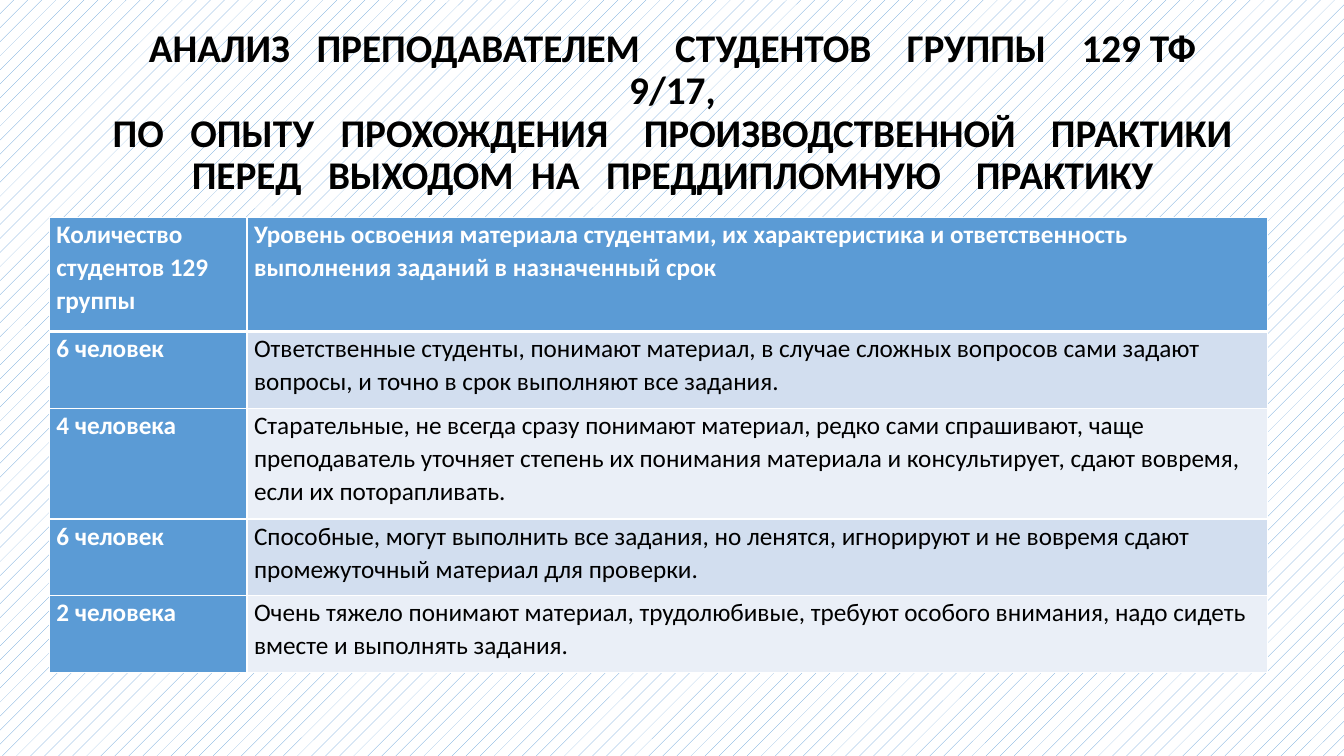
from typing import NamedTuple

from lxml import etree
from pptx import Presentation, util as u
from pptx.dml.color import RGBColor
from pptx.enum import dml, text
from pptx.oxml.ns import qn

WHITE = RGBColor(0xFF, 0xFF, 0xFF)
BLACK = RGBColor(0, 0, 0)
BLUE = RGBColor(0x5B, 0x9B, 0xD5)
BANDS = (RGBColor(0xD2, 0xDE, 0xEF), RGBColor(0xEA, 0xEF, 0xF7))
FONT = "Calibri"
WIDE, HIGH = u.Inches(13.33), u.Inches(7.5)
SPACE = 630


class Word(NamedTuple):
    text: str
    gap: int = 0


class Group(NamedTuple):
    count: str
    level: str
    high: float


TITLE = (
    (Word("АНАЛИЗ", 3), Word("ПРЕПОДАВАТЕЛЕМ", 4), Word("СТУДЕНТОВ", 4),
     Word("ГРУППЫ", 4), Word("129 ТФ")),
    (Word("9/17,"),),
    (Word("ПО", 3), Word("ОПЫТУ", 3), Word("ПРОХОЖДЕНИЯ", 4),
     Word("ПРОИЗВОДСТВЕННОЙ", 4), Word("ПРАКТИКИ")),
    (Word("ПЕРЕД", 3), Word("ВЫХОДОМ", 2), Word("НА", 3),
     Word("ПРЕДДИПЛОМНУЮ", 4), Word("ПРАКТИКУ")),
)
GROUPS = (
    Group("Количество студентов 129 группы",
          "Уровень освоения материала студентами, их характеристика и "
          "ответственность выполнения заданий в назначенный срок", 15.07),
    Group("6 человек",
          "Ответственные студенты, понимают материал, в случае сложных вопросов "
          "сами задают вопросы, и точно в срок выполняют все задания.", 10.13),
    Group("4 человека",
          "Старательные, не всегда сразу понимают материал, редко сами "
          "спрашивают, чаще преподаватель уточняет степень их понимания "
          "материала и консультирует, сдают вовремя, если их поторапливать.", 14.67),
    Group("6 человек",
          "Способные, могут выполнить все задания, но ленятся, игнорируют и не "
          "вовремя сдают промежуточный материал для проверки.", 10.13),
    Group("2 человека",
          "Очень тяжело понимают материал, трудолюбивые, требуют особого "
          "внимания, надо сидеть вместе и выполнять задания.", 10.13),
)
COLS = (14.7, 75.92)


def across(part: float) -> int:
    return round(WIDE * part / 100)


def down(part: float) -> int:
    return round(HIGH * part / 100)


def write(para, words: str, size: int, color: RGBColor, bold: bool):
    run = para.add_run()
    run.text = words
    font = run.font
    font.name, font.size, font.bold = FONT, u.Pt(size), bold
    font.color.rgb = color
    return run


def draw_title(slide) -> None:
    box = slide.shapes.add_textbox(across(6.9), down(5.33), across(86.27), down(19.33))
    frame = box.text_frame
    frame.word_wrap = True
    frame.vertical_anchor = text.MSO_ANCHOR.MIDDLE
    para = frame.paragraphs[0]
    para.alignment = text.PP_ALIGN.CENTER
    para.line_spacing = 0.9
    for row, line in enumerate(TITLE):
        if row:
            para.add_line_break()
        for word in line:
            write(para, word.text, 28, BLACK, True)
            if word.gap:
                gap = write(para, " ", 28, BLACK, True)
                gap.font._element.set("spc", str((word.gap - 1) * SPACE))


def edge(cell, side: str, width: float) -> None:
    line = etree.SubElement(cell._tc.get_or_add_tcPr(), qn(f"a:{side}"), w=str(u.Pt(width)))
    fill = etree.SubElement(line, qn("a:solidFill"))
    etree.SubElement(fill, qn("a:srgbClr"), val=str(WHITE))


def draw_cell(cell, words: str, row: int, col: int) -> None:
    dark = row == 0 or col == 0
    cell.margin_left = cell.margin_right = u.Inches(0.07)
    cell.margin_top = cell.margin_bottom = 0
    for side in ("lnL", "lnR", "lnT", "lnB"):
        thick = (row, side) in ((0, "lnB"), (1, "lnT"))
        edge(cell, side, 3 if thick else 1)
    cell.fill.solid()
    cell.fill.fore_color.rgb = BLUE if dark else BANDS[(row - 1) % 2]
    para = cell.text_frame.paragraphs[0]
    para.line_spacing = 1.07
    write(para, words, 18, WHITE if dark else BLACK, dark)


def draw_table(slide) -> None:
    table = slide.shapes.add_table(
        len(GROUPS), len(COLS), across(3.68), down(28.8), across(sum(COLS)),
        down(sum(group.high for group in GROUPS))).table
    for col, share in enumerate(COLS):
        table.columns[col].width = across(share)
    for row, group in enumerate(GROUPS):
        table.rows[row].height = down(group.high)
        for col, words in enumerate((group.count, group.level)):
            draw_cell(table.cell(row, col), words, row, col)


def main() -> None:
    deck = Presentation()
    deck.slide_width, deck.slide_height = WIDE, HIGH
    slide = deck.slides.add_slide(deck.slide_layouts[6])
    fill = slide.background.fill
    fill.patterned()
    fill.pattern = dml.MSO_PATTERN.PERCENT_5
    fill.fore_color.rgb = BLUE
    fill.back_color.rgb = WHITE
    draw_title(slide)
    draw_table(slide)
    deck.save("out.pptx")


if __name__ == "__main__":
    main()
